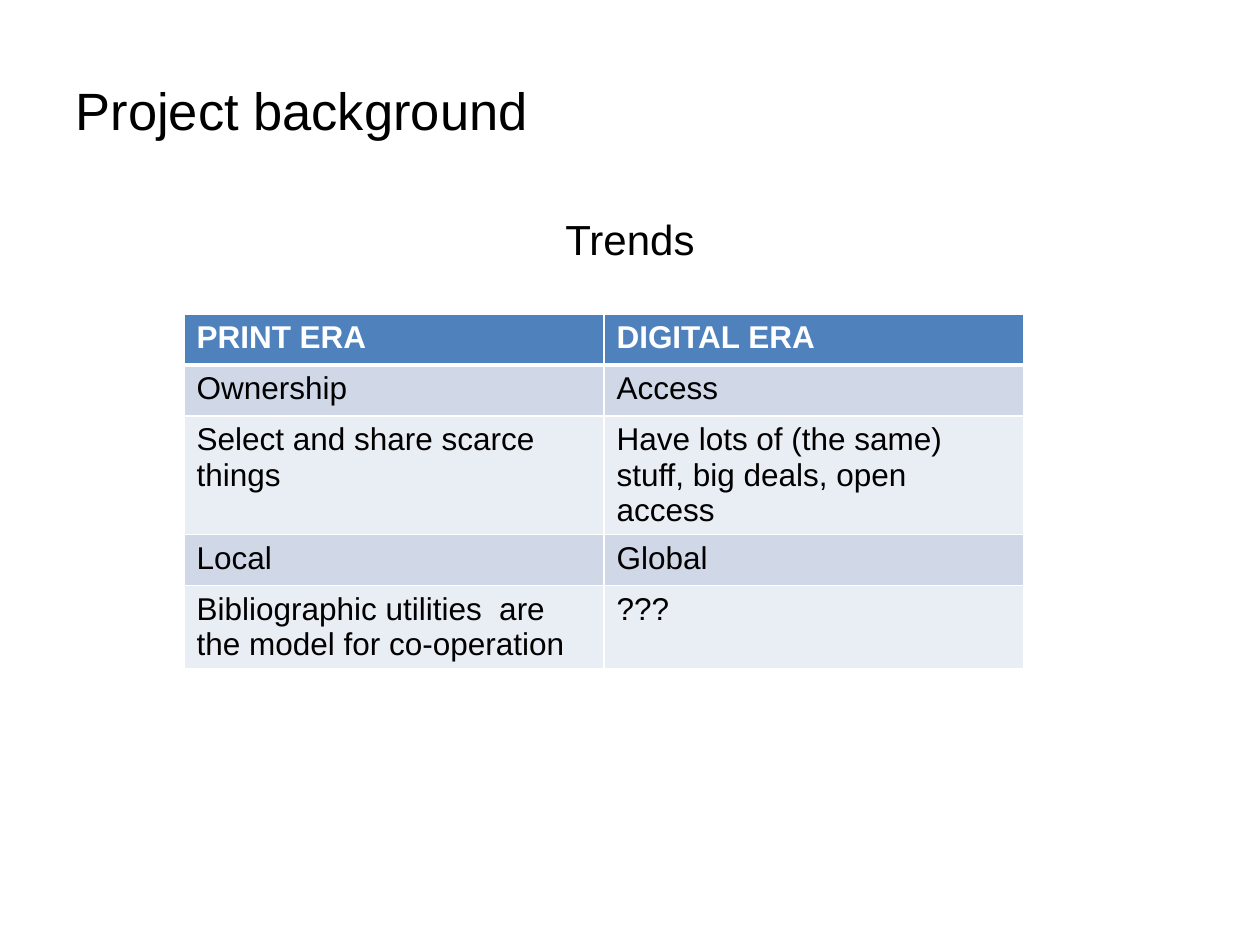
from typing import NamedTuple

from lxml.etree import SubElement
from pptx import Presentation
from pptx.dml.color import RGBColor
from pptx.enum.text import MSO_ANCHOR, MSO_AUTO_SIZE, PP_ALIGN
from pptx.oxml.ns import qn
from pptx.util import Emu, Pt

EMU_PER_PX = 914400 // 126
FONT = "Arial"
COLORS = {
    "text": "000000",
    "white": "FFFFFF",
    "header": "4F81BD",
    "dark_band": "D0D8E8",
    "light_band": "E9EDF4",
}


class Box(NamedTuple):
    left: int
    top: int
    width: int
    height: int


class Row(NamedTuple):
    height: int
    print_era: str
    digital_era: str


TITLE_BOX = Box(63, 66, 1134, 109)
TRENDS_BOX = Box(63, 204, 1134, 595)
TABLE_LEFT, TABLE_TOP, COLUMN_WIDTH = 184, 314, 420
ROWS = [
    Row(51, "PRINT ERA", "DIGITAL ERA"),
    Row(51, "Ownership", "Access"),
    Row(118, "Select and share scarce things",
        "Have lots of (the same) stuff, big deals, open access"),
    Row(51, "Local", "Global"),
    Row(82, "Bibliographic utilities  are the model for co-operation", "???"),
]


def px(length: int) -> Emu:
    return Emu(length * EMU_PER_PX)


def rgb(name: str) -> RGBColor:
    return RGBColor.from_string(COLORS[name])


def format_paragraph(paragraph, size: int, color: str = "text",
                     bold: bool = False, align=PP_ALIGN.LEFT) -> None:
    paragraph.alignment = align
    font = paragraph.font
    font.name, font.size, font.bold = FONT, Pt(size), bold
    font.color.rgb = rgb(color)


def fill_text_shape(shape, box: Box, text: str, size: int, margin_top: int,
                    align=PP_ALIGN.LEFT) -> None:
    shape.left, shape.top, shape.width, shape.height = map(px, box)
    frame = shape.text_frame
    frame.word_wrap = True
    frame.auto_size = MSO_AUTO_SIZE.NONE
    frame.vertical_anchor = MSO_ANCHOR.TOP
    frame.margin_top = px(margin_top)
    frame.text = text
    format_paragraph(frame.paragraphs[0], size, align=align)


def set_borders(cell, top: int, bottom: int) -> None:
    """Draw white borders; top and bottom are widths in points."""
    properties = cell._tc.get_or_add_tcPr()
    for side, width in (("L", 1), ("R", 1), ("T", top), ("B", bottom)):
        line = SubElement(properties, qn(f"a:ln{side}"), w=str(Pt(width)))
        fill = SubElement(line, qn("a:solidFill"))
        SubElement(fill, qn("a:srgbClr"), val=COLORS["white"])


def add_era_table(slide) -> None:
    height = sum(row.height for row in ROWS)
    box = Box(TABLE_LEFT, TABLE_TOP, 2 * COLUMN_WIDTH, height)
    table = slide.shapes.add_table(len(ROWS), 2, *map(px, box)).table
    for column in table.columns:
        column.width = px(COLUMN_WIDTH)
    for index, row in enumerate(ROWS):
        table.rows[index].height = px(row.height)
        is_header = index == 0
        band = "dark_band" if index % 2 else "light_band"
        for column, text in enumerate((row.print_era, row.digital_era)):
            cell = table.cell(index, column)
            cell.text = text
            format_paragraph(cell.text_frame.paragraphs[0], 18,
                             "white" if is_header else "text", is_header)
            set_borders(cell, top=3 if index == 1 else 1,
                        bottom=3 if is_header else 1)
            cell.fill.solid()
            cell.fill.fore_color.rgb = rgb("header" if is_header else band)


def main() -> None:
    presentation = Presentation()
    presentation.slide_width, presentation.slide_height = px(1260), px(945)
    slide = presentation.slides.add_slide(presentation.slide_layouts[5])
    fill_text_shape(slide.shapes.title, TITLE_BOX, "Project background", 30, 12)
    trends = slide.shapes.add_textbox(*map(px, TRENDS_BOX))
    fill_text_shape(trends, TRENDS_BOX, "Trends", 24, 10, PP_ALIGN.CENTER)
    add_era_table(slide)
    presentation.save("out.pptx")


if __name__ == "__main__":
    main()
